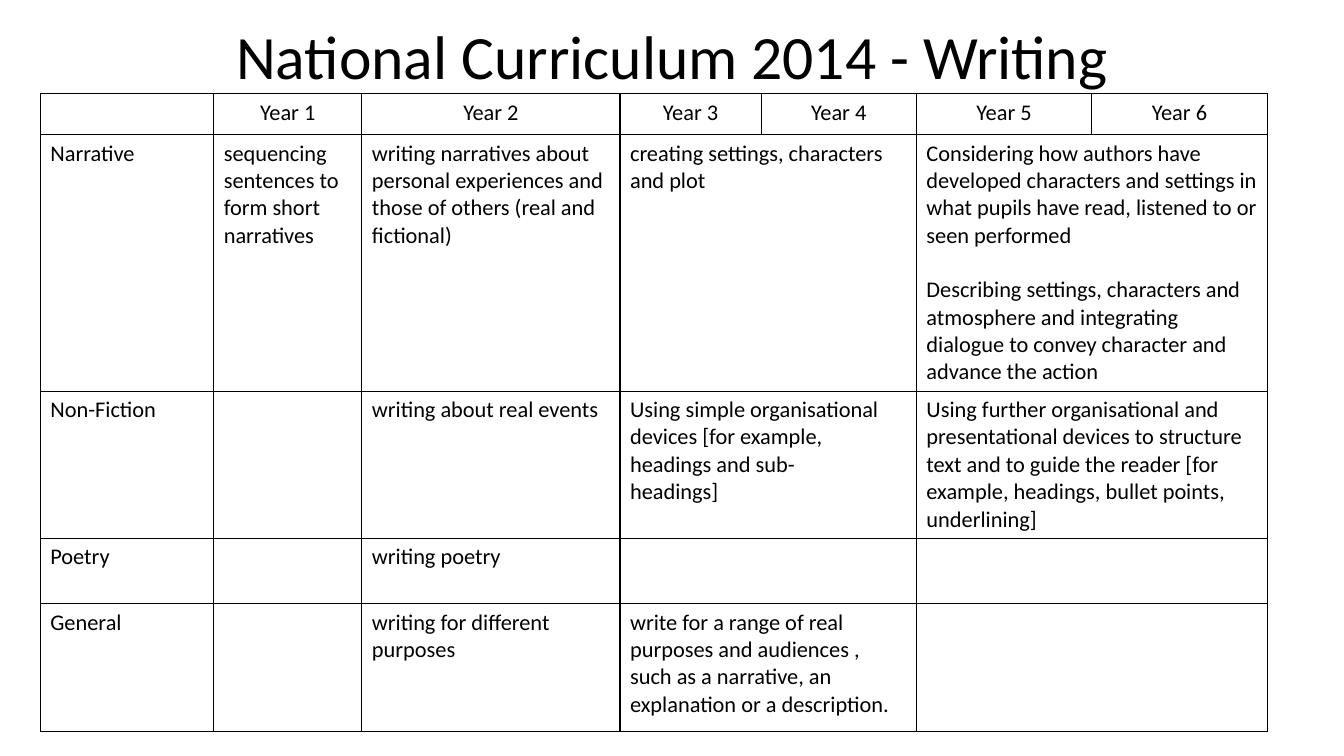
import pptx
import pptx.dml.color
import pptx.enum.text
import pptx.oxml.ns
import pptx.util
from lxml import etree

Inches = pptx.util.Inches
Pt = pptx.util.Pt
Align = pptx.enum.text.PP_ALIGN
BLACK = pptx.dml.color.RGBColor(0x00, 0x00, 0x00)

COLUMN_WIDTHS = [1.72, 1.47, 2.56, 1.4, 1.54, 1.74, 1.74]
ROW_HEIGHTS = [0.39, 2.54, 1.46, 0.65, 1.27]
YEAR_PAIR_STARTS = [3, 5]

CURRICULUM = [
    [[]] + [[f"Year {year}"] for year in range(1, 7)],
    [
        ["Narrative"],
        ["sequencing sentences to form short narratives"],
        ["writing narratives about personal experiences and those of others (real and fictional)"],
        ["creating settings, characters and plot"],
        [],
        [
            "Considering how authors have developed characters and settings in what pupils have read, listened to or seen performed",
            "Describing settings, characters and atmosphere and integrating dialogue to convey character and advance the action",
        ],
        [],
    ],
    [
        ["Non-Fiction"],
        [],
        ["writing about real events"],
        ["Using simple organisational devices [for example, headings and sub-", "headings]"],
        [],
        ["Using further organisational and presentational devices to structure text and to guide the reader [for example, headings, bullet points, underlining]"],
        [],
    ],
    [["Poetry"], [], ["writing poetry"], [], [], [], []],
    [
        ["General"],
        [],
        ["writing for different", "purposes"],
        ["write for a range of real purposes and audiences , such as a narrative, an explanation or a description."],
        [],
        [],
        [],
    ],
]


class CurriculumSlide:
    font = "Calibri"
    title_size = Pt(44)
    cell_size = Pt(16)
    border_width = Pt(1)

    def __init__(self, deck):
        self.slide = deck.slides.add_slide(deck.slide_layouts[5])

    def add_run(self, paragraph, wording, size):
        run = paragraph.add_run()
        run.text = wording
        run.font.name = self.font
        run.font.size = size
        run.font.color.rgb = BLACK

    def title(self, wording, left, top, width, height):
        heading = self.slide.shapes.title
        heading.left, heading.top = Inches(left), Inches(top)
        heading.width, heading.height = Inches(width), Inches(height)
        heading.text_frame.vertical_anchor = pptx.enum.text.MSO_ANCHOR.MIDDLE
        paragraph = heading.text_frame.paragraphs[0]
        paragraph.alignment = Align.CENTER
        paragraph.line_spacing = 0.9
        self.add_run(paragraph, wording, self.title_size)

    def border(self, cell):
        properties = cell._tc.get_or_add_tcPr()
        qn = pptx.oxml.ns.qn
        for side in ("a:lnL", "a:lnR", "a:lnT", "a:lnB"):
            line = etree.SubElement(properties, qn(side), w=str(self.border_width))
            fill = etree.SubElement(line, qn("a:solidFill"))
            etree.SubElement(fill, qn("a:srgbClr"), val=str(BLACK))

    def fill_cell(self, cell, paragraphs, alignment):
        self.border(cell)
        cell.fill.background()
        for index, wording in enumerate(paragraphs):
            frame = cell.text_frame
            paragraph = frame.add_paragraph() if index else frame.paragraphs[0]
            paragraph.alignment = alignment
            self.add_run(paragraph, wording, self.cell_size)

    def table(self, rows, left, top):
        grid = self.slide.shapes.add_table(
            len(rows), len(COLUMN_WIDTHS), Inches(left), Inches(top),
            Inches(sum(COLUMN_WIDTHS)), Inches(sum(ROW_HEIGHTS)),
        ).table
        grid.first_row = grid.horz_banding = False
        for column, width in zip(grid.columns, COLUMN_WIDTHS):
            column.width = Inches(width)
        for row, height in zip(grid.rows, ROW_HEIGHTS):
            row.height = Inches(height)
        for row_index, row in enumerate(rows):
            alignment = Align.LEFT if row_index else Align.CENTER
            for column_index, paragraphs in enumerate(row):
                self.fill_cell(grid.cell(row_index, column_index), paragraphs, alignment)
            if row_index:
                for start in YEAR_PAIR_STARTS:
                    grid.cell(row_index, start).merge(grid.cell(row_index, start + 1))
        return grid


def main():
    deck = pptx.Presentation()
    deck.slide_width, deck.slide_height = Inches(13.33), Inches(7.5)
    writing = CurriculumSlide(deck)
    writing.title("National Curriculum 2014 - Writing", 0.92, -0.13, 11.5, 1.45)
    curriculum = writing.table(CURRICULUM, 0.4, 0.93)
    considering_authors = curriculum.cell(1, 5).text_frame.paragraphs[0]
    considering_authors.space_after = Pt(19.5)
    deck.save("out.pptx")


if __name__ == "__main__":
    main()
